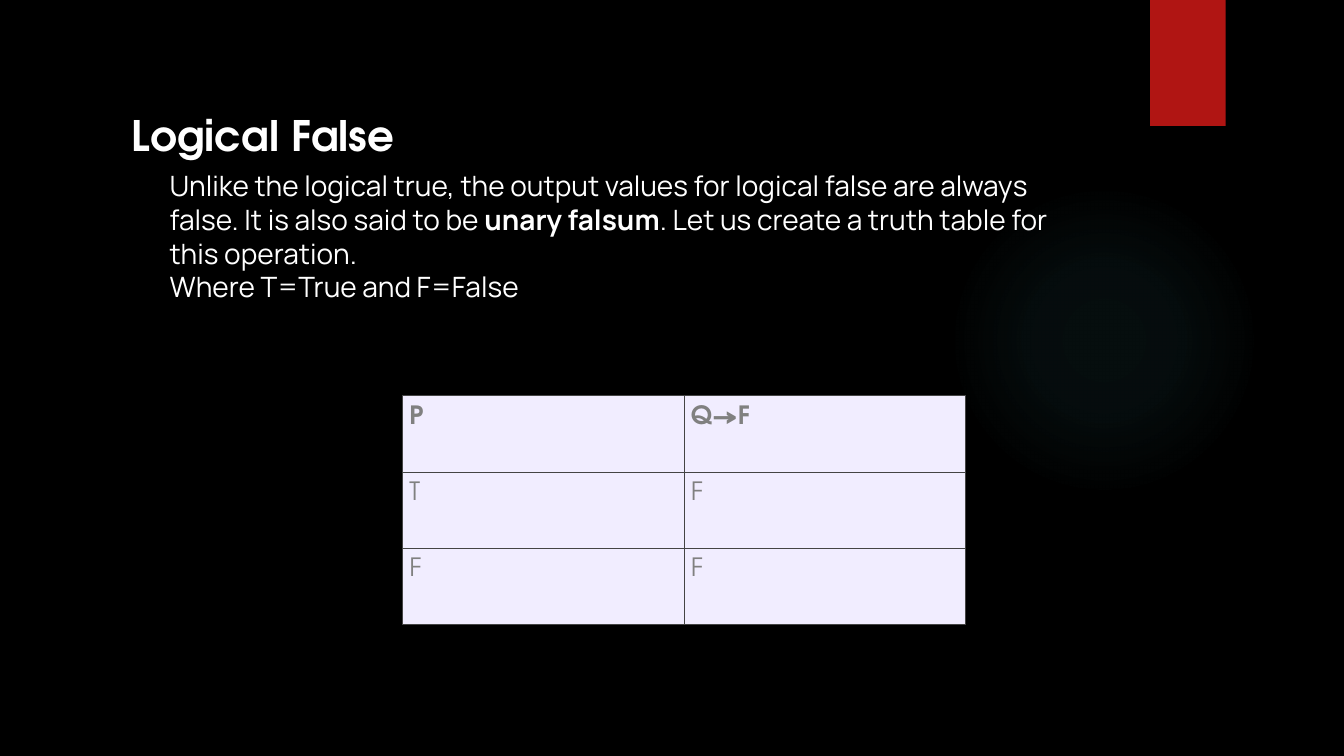
from lxml.etree import SubElement
from pptx import Presentation
from pptx.dml.color import RGBColor
from pptx.enum.shapes import MSO_SHAPE
from pptx.enum.text import MSO_ANCHOR, PP_ALIGN
from pptx.oxml import parse_xml
from pptx.oxml.ns import nsdecls, qn
from pptx.util import Pt

TITLE = "Logical False"
BODY = [
    [("Unlike the logical true, the output values for logical false are always "
      "false. It is also said to be\u00a0", False),
     ("unary falsum", True),
     (". Let us create a truth table for this operation.", False)],
    [("Where T=True and F=False", False)],
]
TRUTH_TABLE = [("P", "Q→F"), ("T", "F"), ("F", "F")]
GLOW_STOPS = [(0, 7), (36, 6), (69, 0)]  # position %, opacity %

HEAD_FONT, BODY_FONT = "TeX Gyre Adventor", "Manrope"
BLACK, WHITE, RED, GLOW = "000000", "FFFFFF", "B01513", "50B9C1"
CELL_FILL, CELL_TEXT, BORDER = "F1EDFF", "808080", "444444"
COL_W, ROW_H = 201, 54.5


def rgb(value):
    return RGBColor.from_string(value)


def add_run(p, text, font, size, color, bold=False):
    r = p.add_run()
    r.text = text
    r.font.name, r.font.size, r.font.bold = font, Pt(size), bold
    r.font.color.rgb = rgb(color)


def add_plain_shape(s, kind, left, top, width, height):
    sp = s.shapes.add_shape(kind, Pt(left), Pt(top), Pt(width), Pt(height))
    sp.shadow.inherit = False
    sp.line.fill.background()
    return sp


def fill_glow(sp):
    stops = "".join(
        f'<a:gs pos="{pos * 1000}"><a:srgbClr val="{GLOW}">'
        f'<a:alpha val="{alpha * 1000}"/></a:srgbClr></a:gs>'
        for pos, alpha in GLOW_STOPS)
    grad = parse_xml(
        f'<a:gradFill {nsdecls("a")}><a:gsLst>{stops}</a:gsLst>'
        '<a:path path="circle"><a:fillToRect l="50000" t="50000" r="50000" b="50000"/>'
        '</a:path></a:gradFill>')
    spPr = sp.element.spPr
    spPr.find(qn("a:prstGeom")).addnext(grad)


def add_borders(cell, bottom):
    tcPr = cell._tc.get_or_add_tcPr()
    for side, width in (("L", 0.3), ("R", 0.3), ("T", 0.3), ("B", bottom)):
        ln = SubElement(tcPr, qn(f"a:ln{side}"), w=str(int(Pt(width))))
        fill = SubElement(ln, qn("a:solidFill"))
        SubElement(fill, qn("a:srgbClr"), val=BORDER)


prs = Presentation()
prs.slide_width, prs.slide_height = Pt(960), Pt(540)
s = prs.slides.add_slide(prs.slide_layouts[5])
s.background.fill.solid()
s.background.fill.fore_color.rgb = rgb(BLACK)

# Backdrop: soft glow and red tab
fill_glow(add_plain_shape(s, MSO_SHAPE.OVAL, 677.5, 132, 222, 222))
tab = add_plain_shape(s, MSO_SHAPE.RECTANGLE, 821.5, 0, 54, 90)
tab.fill.solid()
tab.fill.fore_color.rgb = rgb(RED)

# Title
title = s.shapes.title
title.left, title.top, title.width, title.height = Pt(87), Pt(79), Pt(704), Pt(42)
tf = title.text_frame
tf.vertical_anchor = MSO_ANCHOR.TOP
p = tf.paragraphs[0]
p.alignment, p.line_spacing = PP_ALIGN.LEFT, 0.9
add_run(p, TITLE, HEAD_FONT, 30, WHITE, True)

# Explanation
tf = s.shapes.add_textbox(Pt(114), Pt(117), Pt(677), Pt(104)).text_frame
tf.word_wrap = True
for i, runs in enumerate(BODY):
    p = tf.add_paragraph() if i else tf.paragraphs[0]
    p.line_spacing = Pt(24)
    for text, bold in runs:
        add_run(p, text, BODY_FONT, 20, WHITE, bold)

# Truth table
rows, cols = len(TRUTH_TABLE), len(TRUTH_TABLE[0])
table = s.shapes.add_table(rows, cols, Pt(287.5), Pt(282.5),
                           Pt(cols * COL_W), Pt(rows * ROW_H)).table
table.first_row = table.horz_banding = False
for col in table.columns:
    col.width = Pt(COL_W)
for i, values in enumerate(TRUTH_TABLE):
    table.rows[i].height = Pt(ROW_H)
    for j, value in enumerate(values):
        cell = table.cell(i, j)
        cell.margin_left = cell.margin_right = Pt(5)
        cell.margin_top = cell.margin_bottom = Pt(7.2)
        add_borders(cell, 0.6 if i == rows - 1 else 0.3)
        cell.fill.solid()
        cell.fill.fore_color.rgb = rgb(CELL_FILL)
        add_run(cell.text_frame.paragraphs[0], value, HEAD_FONT, 18, CELL_TEXT, i == 0)

prs.save("out.pptx")
